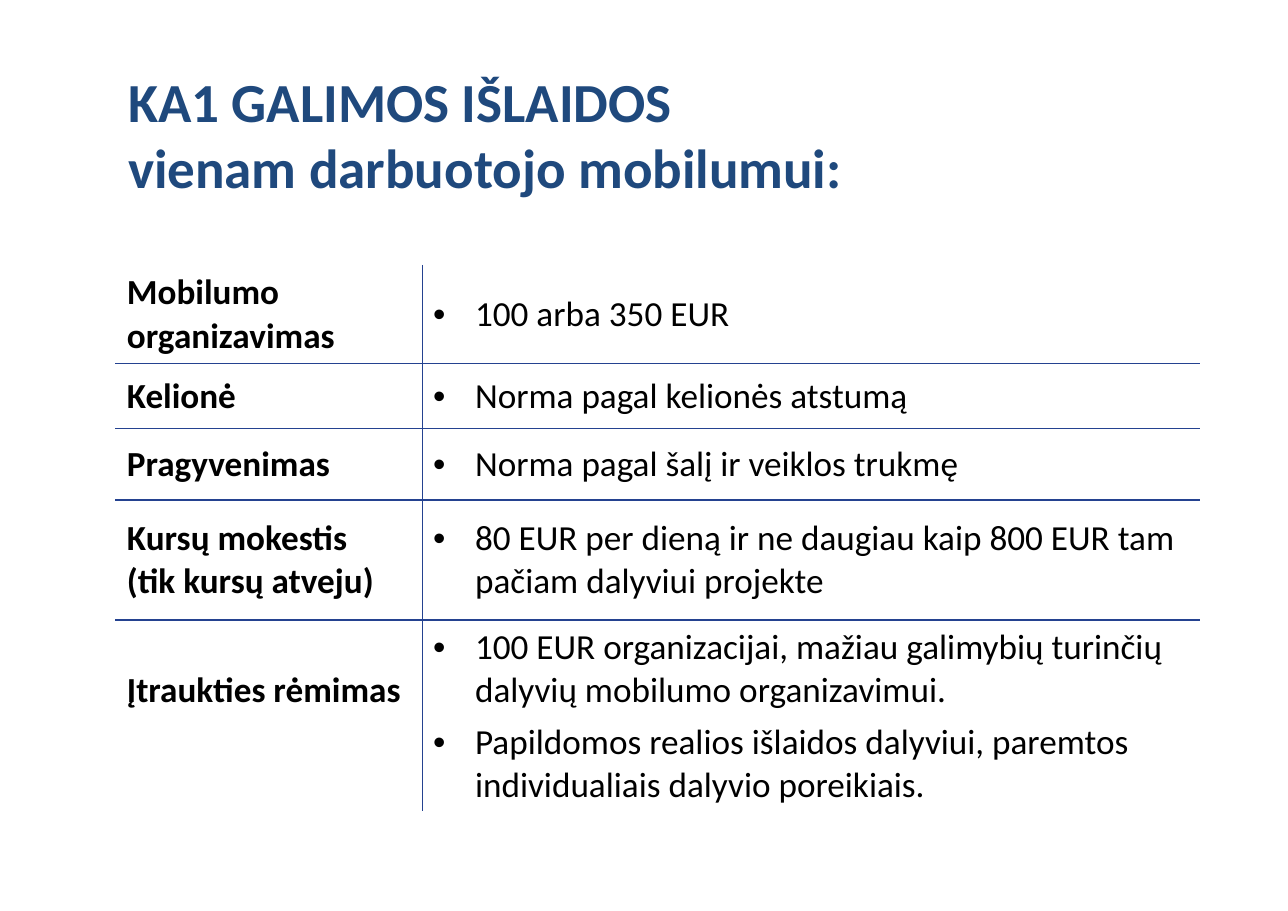
import pptx
import pptx.util
import pptx.dml.color
import pptx.enum.text
import pptx.oxml
import pptx.oxml.ns

Inches, Pt = pptx.util.Inches, pptx.util.Pt
Anchor = pptx.enum.text.MSO_ANCHOR
NAVY = pptx.dml.color.RGBColor(0x1F, 0x49, 0x7D)
BORDER_BLUE = pptx.dml.color.RGBColor(0x24, 0x42, 0x90)
WHITE = pptx.dml.color.RGBColor(0xFF, 0xFF, 0xFF)
BLACK = pptx.dml.color.RGBColor(0, 0, 0)
FONT = "Calibri"

TITLE_LINES = ["KA1 GALIMOS IŠLAIDOS", "vienam darbuotojo mobilumui:"]

# Row height, label paragraphs, bulleted paragraphs
EXPENSES = [
    (0.89, ["Mobilumo organizavimas"], ["100 arba 350 EUR"]),
    (0.59, ["Kelionė"], ["Norma pagal kelionės atstumą"]),
    (0.65, ["Pragyvenimas"], ["Norma pagal šalį ir veiklos trukmę"]),
    (1.09, ["Kursų mokestis", "(tik kursų atveju)"],
     ["80 EUR per dieną ir ne daugiau kaip 800 EUR tam pačiam dalyviui projekte"]),
    (1.74, ["Įtraukties rėmimas"],
     ["100 EUR organizacijai, mažiau galimybių turinčių dalyvių mobilumo organizavimui.",
      "Papildomos realios išlaidos dalyviui, paremtos individualiais dalyvio poreikiais."]),
]

SLIDE_WIDTH, SLIDE_HEIGHT = 11.69, 8.27
LEFT = 0.09 * SLIDE_WIDTH
TITLE_TOP, TITLE_WIDTH, TITLE_HEIGHT = 0.73, 8.32, 0.96
TABLE_TOP = 2.41
COLUMN_WIDTHS = [2.78, 7.05]
BODY_SIZE, LINE_HEIGHT, BULLET_INDENT = 23, 0.39, 0.38
MARGIN_X, MARGIN_Y = 0.1, 0.05


def add_run(paragraph, text, size, color, bold):
    run = paragraph.add_run()
    run.text = text
    run.font.name = FONT
    run.font.size = Pt(size)
    run.font.bold = bold
    run.font.color.rgb = color


def add_bullet(paragraph):
    properties = paragraph._p.get_or_add_pPr()
    properties.set("marL", str(Inches(BULLET_INDENT)))
    properties.set("indent", str(-Inches(BULLET_INDENT)))
    namespace = pptx.oxml.ns.nsdecls("a")
    properties.append(pptx.oxml.parse_xml(f'<a:buFont {namespace} typeface="Arial"/>'))
    properties.append(pptx.oxml.parse_xml(f'<a:buChar {namespace} char="•"/>'))


def set_borders(cell, colors):
    """Draw 1 pt borders; colors are in the order left, right, top, bottom."""
    properties = cell._tc.get_or_add_tcPr()
    for position, (side, color) in enumerate(zip("LRTB", colors)):
        properties.insert(position, pptx.oxml.parse_xml(
            f'<a:ln{side} {pptx.oxml.ns.nsdecls("a")} w="{Pt(1)}">'
            f'<a:solidFill><a:srgbClr val="{color}"/></a:solidFill></a:ln{side}>'))


def fill_cell(cell, texts, is_label):
    cell.fill.background()
    cell.vertical_anchor = Anchor.MIDDLE
    cell.margin_left = cell.margin_right = Inches(MARGIN_X)
    cell.margin_top = cell.margin_bottom = Inches(MARGIN_Y)
    frame = cell.text_frame
    for index, text in enumerate(texts):
        paragraph = frame.add_paragraph() if index else frame.paragraphs[0]
        if not is_label:
            add_bullet(paragraph)
            if len(texts) > 1:
                paragraph.space_after = Pt(6)
        add_run(paragraph, text, BODY_SIZE, BLACK, is_label)


def add_title(slide):
    title = slide.shapes.add_textbox(Inches(LEFT), Inches(TITLE_TOP),
                                     Inches(TITLE_WIDTH), Inches(TITLE_HEIGHT))
    frame = title.text_frame
    frame.word_wrap = True
    frame.vertical_anchor = Anchor.MIDDLE
    frame.margin_left = frame.margin_right = Inches(0.11)
    frame.margin_top = frame.margin_bottom = Inches(0.06)
    paragraph = frame.paragraphs[0]
    for index, line in enumerate(TITLE_LINES):
        if index:
            paragraph.add_line_break()
        add_run(paragraph, line, 36, NAVY, True)


def add_expense_table(slide):
    heights = [height for height, _, _ in EXPENSES]
    table = slide.shapes.add_table(
        len(EXPENSES), len(COLUMN_WIDTHS), Inches(LEFT), Inches(TABLE_TOP),
        Inches(sum(COLUMN_WIDTHS)), Inches(sum(heights))).table
    table.first_row = table.horz_banding = False
    for column, width in zip(table.columns, COLUMN_WIDTHS):
        column.width = Inches(width)
    last_row, last_column = len(EXPENSES) - 1, len(COLUMN_WIDTHS) - 1
    for row, (height, *contents) in enumerate(EXPENSES):
        table.rows[row].height = Inches(height)
        for column, texts in enumerate(contents):
            cell = table.cell(row, column)
            fill_cell(cell, texts, is_label=column == 0)
            outer_edges = (column == 0, column == last_column, row == 0, row == last_row)
            set_borders(cell, [WHITE if outer else BORDER_BLUE for outer in outer_edges])
    # The last label lines up with the second line of its first bullet
    last_label = table.cell(last_row, 0)
    last_label.vertical_anchor = Anchor.TOP
    last_label.margin_top = Inches(MARGIN_Y + LINE_HEIGHT)
    table.cell(last_row, last_column).vertical_anchor = Anchor.TOP


def main():
    presentation = pptx.Presentation()
    presentation.slide_width = Inches(SLIDE_WIDTH)
    presentation.slide_height = Inches(SLIDE_HEIGHT)
    slide = presentation.slides.add_slide(presentation.slide_layouts[6])
    add_title(slide)
    add_expense_table(slide)
    presentation.save("out.pptx")


if __name__ == "__main__":
    main()
